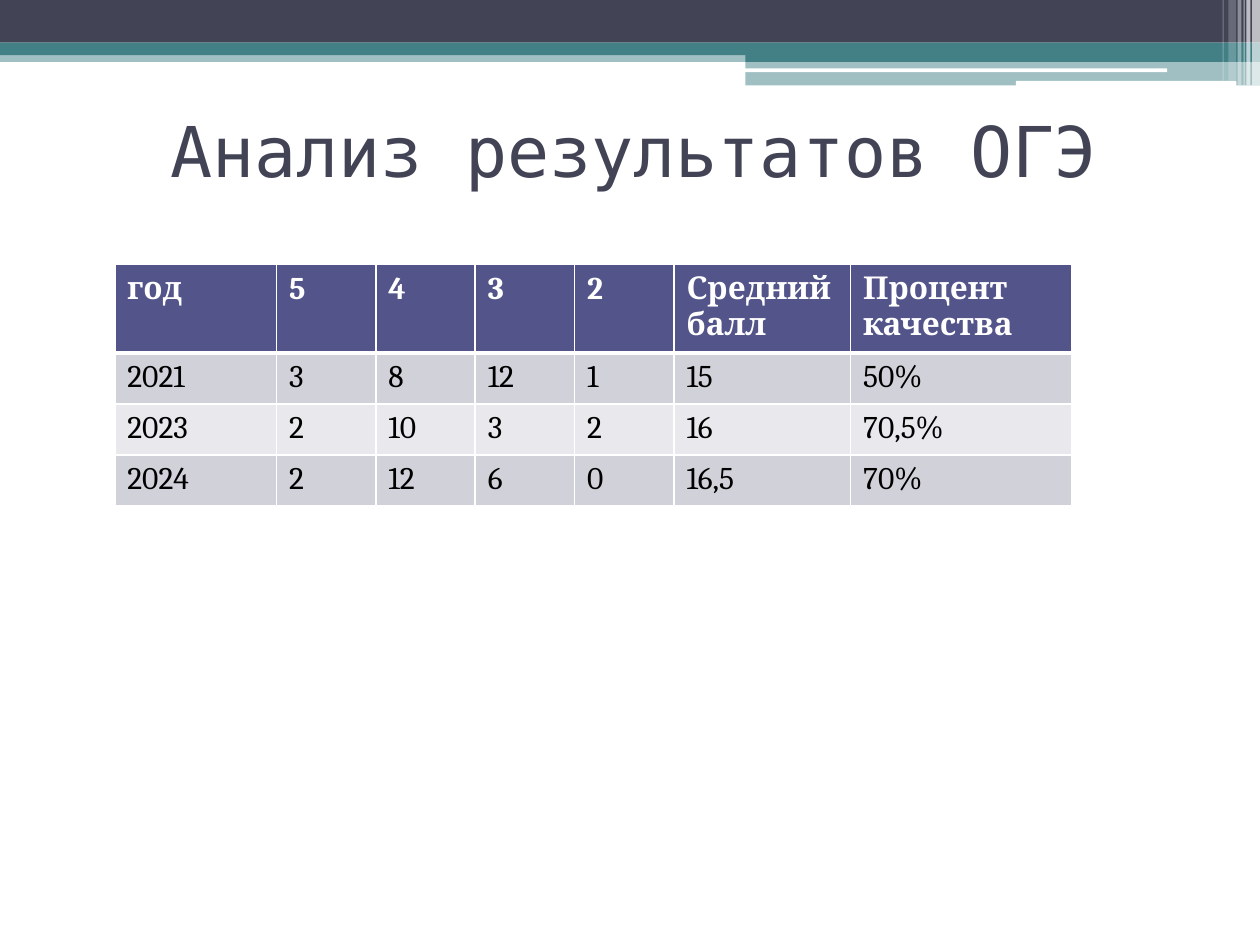
from dataclasses import dataclass
from typing import NamedTuple

from lxml import etree
from pptx import Presentation
from pptx.dml.color import RGBColor
from pptx.enum import shapes, text
from pptx.oxml import ns
from pptx.util import Pt


@dataclass(frozen=True)
class Theme:
    dark: str = "424456"
    teal: str = "438086"
    white: str = "FFFFFF"
    black: str = "000000"
    header: str = "53548A"
    stripes: tuple = ("D1D1DA", "E9E9ED")
    title_font: str = "DejaVu Sans Mono"
    table_font: str = "Cambria"
    title_size: float = 40
    table_size: float = 18
    border: float = 1
    header_border: float = 3


class Bar(NamedTuple):
    left: float
    top: float
    width: float
    height: float
    color: str
    opacity: int = 100
    rounded: bool = False


THEME = Theme()

# Header bands, from back to front
BANDS = [
    Bar(0, 28.8, 720, 6.6, THEME.teal, 50),
    Bar(0, 0, 720, 24.4, THEME.dark),
    Bar(0, 24.4, 720, 7.2, THEME.teal),
    Bar(426, 28.2, 294, 7.2, THEME.teal),
    Bar(426, 35.4, 294, 13.4, THEME.teal, 50),
    Bar(425.7, 39.1, 241.2, 2.2, THEME.white, rounded=True),
    Bar(580.5, 46.3, 126, 2.9, THEME.white, rounded=True),
]

# Light stripes in the top right corner: left, width, height, opacity
STRIPES = [
    Bar(left, 0, width, height, THEME.white, opacity)
    for left, width, height, opacity in [
        (715.5, 4.5, 48.8, 65),
        (712.3, 2.2, 48.8, 65),
        (710.6, 0.7, 48.8, 60),
        (707.2, 2.2, 48.8, 40),
        (702, 4.3, 46.1, 20),
        (698.6, 0.7, 46.1, 30),
    ]
]

COLUMN_WIDTHS = [92.4, 56.8, 56.8, 56.8, 56.8, 101, 126.4]
ROW_HEIGHTS = [48.8, 29.2, 29.2, 29.2]
RESULTS = [
    ["год", "5", "4", "3", "2", "Средний балл", "Процент качества"],
    ["2021", "3", "8", "12", "1", "15", "50%"],
    ["2023", "2", "10", "3", "2", "16", "70,5%"],
    ["2024", "2", "12", "6", "0", "16,5", "70%"],
]


def rgb(color: str) -> RGBColor:
    return RGBColor.from_string(color)


def style_font(font, name: str, size: float, color: str, bold: bool = False) -> None:
    font.name, font.size, font.bold = name, Pt(size), bold
    font.color.rgb = rgb(color)


def draw_bar(slide, bar: Bar) -> None:
    kind = shapes.MSO_SHAPE.ROUNDED_RECTANGLE if bar.rounded else shapes.MSO_SHAPE.RECTANGLE
    shape = slide.shapes.add_shape(
        kind, Pt(bar.left), Pt(bar.top), Pt(bar.width), Pt(bar.height))
    shape.shadow.inherit = False
    shape.line.fill.background()
    shape.fill.solid()
    shape.fill.fore_color.rgb = rgb(bar.color)
    if bar.opacity < 100:
        color = shape.fill._xPr.find(".//" + ns.qn("a:srgbClr"))
        etree.SubElement(color, ns.qn("a:alpha"), val=str(bar.opacity * 1000))


def draw_title(slide, title: str) -> None:
    box = slide.shapes.add_textbox(Pt(38), Pt(43.2), Pt(648), Pt(84.2))
    frame = box.text_frame
    frame.word_wrap = True
    frame.vertical_anchor = text.MSO_ANCHOR.MIDDLE
    paragraph = frame.paragraphs[0]
    paragraph.text = title
    paragraph.alignment = text.PP_ALIGN.CENTER
    style_font(paragraph.font, THEME.title_font, THEME.title_size, THEME.dark)


def set_borders(cell, widths: dict[str, float]) -> None:
    properties = cell._tc.get_or_add_tcPr()
    for index, (side, width) in enumerate(widths.items()):
        line = etree.Element(ns.qn(f"a:ln{side}"), w=str(Pt(width)))
        fill = etree.SubElement(line, ns.qn("a:solidFill"))
        etree.SubElement(fill, ns.qn("a:srgbClr"), val=THEME.white)
        properties.insert(index, line)


def fill_cell(cell, value: str, row: int) -> None:
    is_header = row == 0
    cell.fill.solid()
    cell.fill.fore_color.rgb = rgb(
        THEME.header if is_header else THEME.stripes[(row - 1) % 2])
    set_borders(cell, {
        "L": THEME.border,
        "R": THEME.border,
        "T": THEME.header_border if row == 1 else THEME.border,
        "B": THEME.header_border if is_header else THEME.border,
    })
    paragraph = cell.text_frame.paragraphs[0]
    paragraph.text = value
    style_font(paragraph.font, THEME.table_font, THEME.table_size,
               THEME.white if is_header else THEME.black, is_header)


def draw_table(slide, rows: list[list[str]]) -> None:
    table = slide.shapes.add_table(
        len(rows), len(COLUMN_WIDTHS), Pt(65.6), Pt(151.2),
        Pt(sum(COLUMN_WIDTHS)), Pt(sum(ROW_HEIGHTS))).table
    for column, width in zip(table.columns, COLUMN_WIDTHS):
        column.width = Pt(width)
    for row, height in zip(table.rows, ROW_HEIGHTS):
        row.height = Pt(height)
    for row_index, values in enumerate(rows):
        for column_index, value in enumerate(values):
            fill_cell(table.cell(row_index, column_index), value, row_index)


def main() -> None:
    presentation = Presentation()
    presentation.slide_width, presentation.slide_height = Pt(720), Pt(540)
    slide = presentation.slides.add_slide(presentation.slide_layouts[6])
    for bar in BANDS + STRIPES:
        draw_bar(slide, bar)
    draw_title(slide, "Анализ результатов ОГЭ")
    draw_table(slide, RESULTS)
    presentation.save("out.pptx")


if __name__ == "__main__":
    main()
